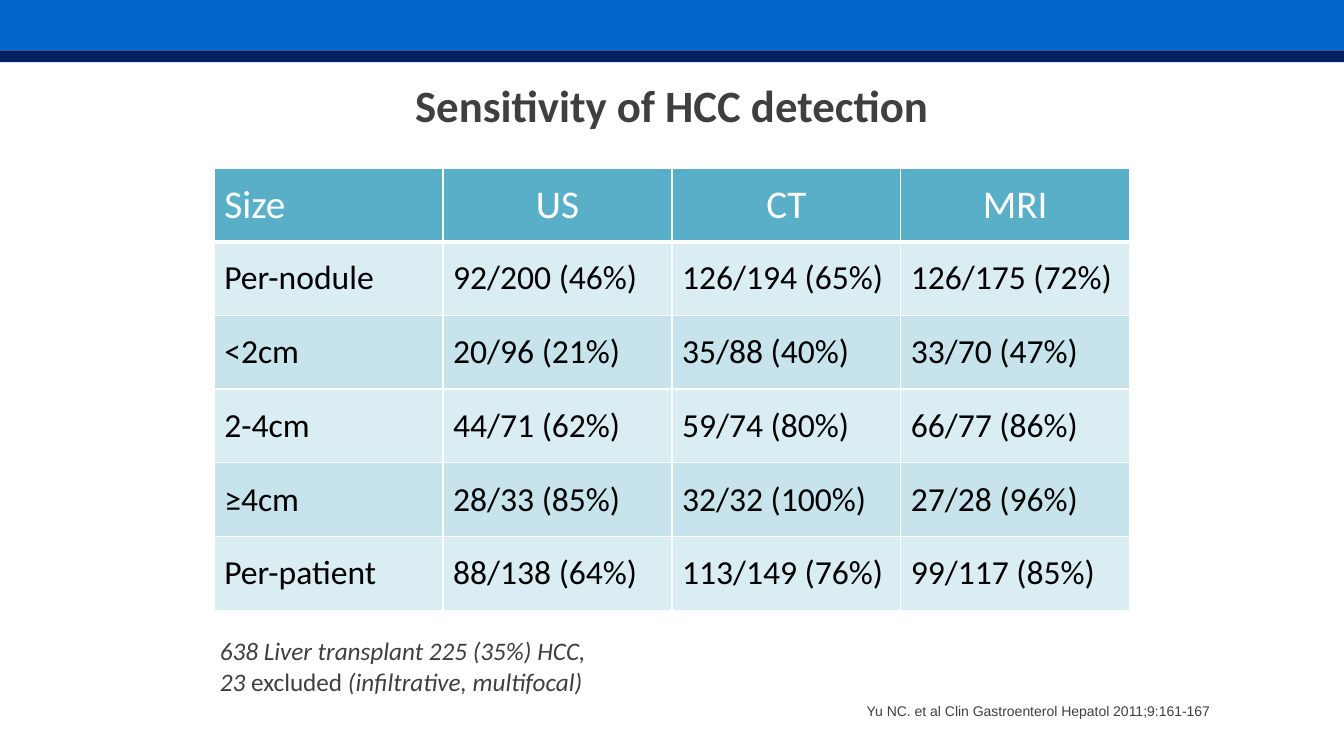
"""Build the slide on the sensitivity of HCC detection by size and modality."""
from lxml import etree
from pptx import Presentation
from pptx.dml.color import RGBColor
from pptx.enum import shapes, text
from pptx.oxml import ns
from pptx.util import Pt

BLUE = RGBColor(0x00, 0x66, 0xCC)
NAVY = RGBColor(0x00, 0x20, 0x60)
GREY = RGBColor(0x3F, 0x3F, 0x3F)
TEAL = RGBColor(0x5A, 0xAF, 0xC8)
PALE = RGBColor(0xDA, 0xED, 0xF3)
MIST = RGBColor(0xC7, 0xE4, 0xEC)
WHITE = RGBColor(0xFF, 0xFF, 0xFF)
BLACK = RGBColor(0x00, 0x00, 0x00)

LEFT = text.PP_ALIGN.LEFT
CENTER = text.PP_ALIGN.CENTER
MIDDLE = text.MSO_ANCHOR.MIDDLE

ROWS = [
    ["Size", "US", "CT", "MRI"],
    ["Per-nodule", "92/200 (46%)", "126/194 (65%)", "126/175 (72%)"],
    ["<2cm", "20/96 (21%)", "35/88 (40%)", "33/70 (47%)"],
    ["2-4cm", "44/71 (62%)", "59/74 (80%)", "66/77 (86%)"],
    ["≥4cm", "28/33 (85%)", "32/32 (100%)", "27/28 (96%)"],
    ["Per-patient", "88/138 (64%)", "113/149 (76%)", "99/117 (85%)"],
]


class Deck:
    """Hold the font and the slide, and draw each kind of element."""

    def __init__(self, face):
        self.face = face
        self.file = Presentation()
        self.file.slide_width, self.file.slide_height = Pt(960), Pt(540)
        self.slide = self.file.slides.add_slide(self.file.slide_layouts[6])

    def style(self, para, size, color, face=None, bold=False, italic=False):
        """Set the font of a paragraph."""
        font = para.font
        font.name, font.size = face or self.face, Pt(size)
        font.bold, font.italic = bold, italic
        font.color.rgb = color

    def band(self, top, height, color):
        """Draw a bar across the full width."""
        bar = self.slide.shapes.add_shape(
            shapes.MSO_SHAPE.RECTANGLE, 0, Pt(top), self.file.slide_width, Pt(height))
        bar.shadow.inherit = False
        bar.fill.solid()
        bar.fill.fore_color.rgb = color
        bar.line.fill.background()

    def label(self, box, lines, size, align=LEFT, anchor=text.MSO_ANCHOR.TOP,
              wrap=True, space=1.0, **font):
        """Write lines, each a list of (words, italic) runs."""
        frame = self.slide.shapes.add_textbox(*map(Pt, box)).text_frame
        frame.word_wrap, frame.vertical_anchor = wrap, anchor
        for i, line in enumerate(lines):
            para = frame.add_paragraph() if i else frame.paragraphs[0]
            para.alignment, para.line_spacing = align, space
            self.style(para, size, GREY, **font)
            for words, italic in line:
                run = para.add_run()
                run.text = words
                if italic is not None:
                    run.font.italic = italic

    def edge(self, cell, side, width):
        """Add one white border to a cell."""
        line = etree.Element(ns.qn("a:" + side), w=str(Pt(width)))
        fill = etree.SubElement(line, ns.qn("a:solidFill"))
        etree.SubElement(fill, ns.qn("a:srgbClr"), val=str(WHITE))
        return line

    def grid(self, box, rows):
        """Draw a table with a header row and banded body rows."""
        left, top, width, height = map(Pt, box)
        table = self.slide.shapes.add_table(
            len(rows), len(rows[0]), left, top, width, height).table
        for i, row in enumerate(rows):
            head = i == 0
            for j, words in enumerate(row):
                cell = table.cell(i, j)
                cell.text, cell.vertical_anchor = words, MIDDLE
                para = cell.text_frame.paragraphs[0]
                para.alignment = CENTER if head and j else LEFT
                self.style(para, 28 if head else 24, WHITE if head else BLACK)
                cell.fill.solid()
                cell.fill.fore_color.rgb = TEAL if head else PALE if i % 2 else MIST
                widths = {"lnL": 1, "lnR": 1, "lnT": 3 if i == 1 else 1,
                          "lnB": 3 if head else 1}
                props = cell._tc.get_or_add_tcPr()
                for k, (side, size) in enumerate(widths.items()):
                    props.insert(k, self.edge(cell, side, size))


def main():
    """Draw the slide and save it."""
    deck = Deck("Calibri")
    deck.band(0, 36, BLUE)
    deck.band(36, 8.5, NAVY)
    deck.label((48, 30, 864, 90), [[("Sensitivity of HCC detection", None)]], 32,
               CENTER, MIDDLE, bold=True)
    deck.label((612, 499.5, 263, 18),
               [[("Yu NC. et al Clin Gastroenterol Hepatol 2011;9:161-167", None)]], 10,
               wrap=False, space=0.9, face="Arial")
    deck.label((150, 450.5, 438, 51),
               [[("638 Liver transplant 225 (35%) HCC,", True)],
                [("23 ", True), ("excluded", False),
                 (" (infiltrative, multifocal)", True)]], 18)
    deck.grid((153, 120, 654, 316), ROWS)
    deck.file.save("out.pptx")


if __name__ == "__main__":
    main()
